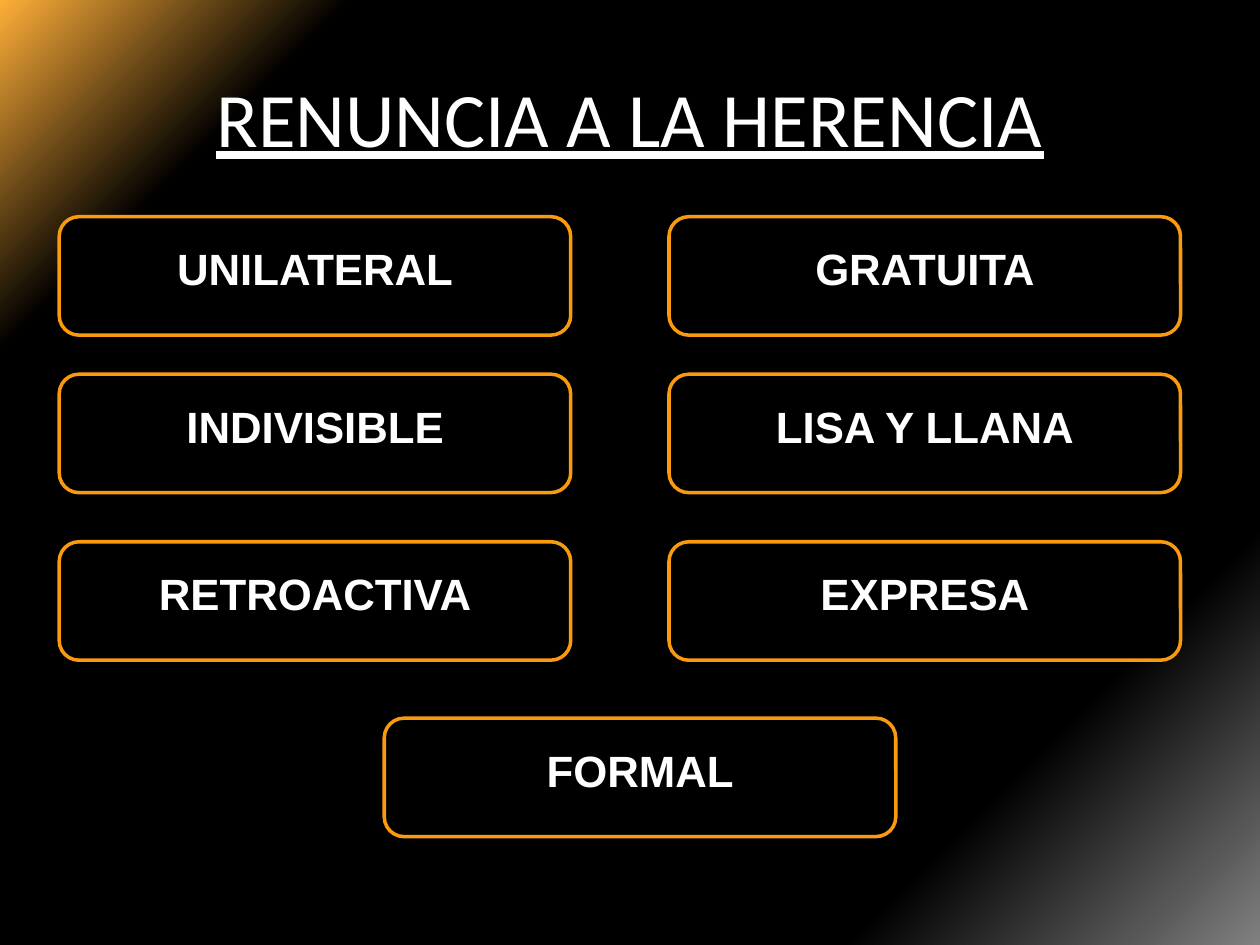
from dataclasses import dataclass

from lxml import etree
from pptx import Presentation
from pptx.dml.color import RGBColor
from pptx.enum.shapes import MSO_SHAPE
from pptx.enum.text import MSO_ANCHOR, MSO_AUTO_SIZE, PP_ALIGN
from pptx.oxml.ns import qn
from pptx.util import Inches, Pt

ROUNDED = MSO_SHAPE.ROUNDED_RECTANGLE
TOP, MIDDLE = MSO_ANCHOR.TOP, MSO_ANCHOR.MIDDLE
CENTER = PP_ALIGN.CENTER
GROW, FIXED = MSO_AUTO_SIZE.SHAPE_TO_FIT_TEXT, MSO_AUTO_SIZE.NONE


@dataclass(frozen=True)
class Theme:
    text: str = "FFFFFF"
    card: str = "000000"
    border: str = "F99A0F"
    # (position in percent, colour)
    backdrop: tuple = ((0, "FFAF39"), (16, "000000"), (81, "000000"), (100, "808080"))
    title_font: str = "Calibri"
    card_font: str = "Arial"
    title_size: int = 44
    card_size: int = 25
    border_width: int = 2


THEME = Theme()

CARD_W, CARD_H = 4.06, 0.94
LABEL_W, LABEL_H = 3.59, 0.52
LABEL_DY = 0.15
LEFT_COL, RIGHT_COL = 0.47, 5.31
PAIRS = [
    (1.72, "UNILATERAL", "GRATUITA"),
    (2.97, "INDIVISIBLE", "LISA Y LLANA"),
    (4.3, "RETROACTIVA", "EXPRESA"),
]


def set_backdrop(s):
    """Fill the background with a diagonal gradient of several stops."""
    fill = s.background.fill
    fill.gradient()
    fill.gradient_angle = 315
    stops = s.element.find(f".//{qn('a:gsLst')}")
    for old in list(stops):
        stops.remove(old)
    for percent, color in THEME.backdrop:
        stop = etree.SubElement(stops, qn("a:gs"), pos=str(percent * 1000))
        etree.SubElement(stop, qn("a:srgbClr"), val=color)


def add_text(s, text, x, y, w, h, *, font, size, bold=False, underline=False,
             anchor=TOP, auto_size=FIXED):
    tf = s.shapes.add_textbox(Inches(x), Inches(y), Inches(w), Inches(h)).text_frame
    tf.word_wrap = True
    tf.auto_size = auto_size
    tf.vertical_anchor = anchor
    p = tf.paragraphs[0]
    p.alignment = CENTER
    r = p.add_run()
    r.text = text
    r.font.name = font
    r.font.size = Pt(size)
    r.font.bold = bold
    r.font.underline = underline
    r.font.color.rgb = RGBColor.from_string(THEME.text)


def add_card(s, text, x, y):
    sp = s.shapes.add_shape(ROUNDED, Inches(x), Inches(y), Inches(CARD_W), Inches(CARD_H))
    sp.shadow.inherit = False
    sp.fill.solid()
    sp.fill.fore_color.rgb = RGBColor.from_string(THEME.card)
    sp.line.color.rgb = RGBColor.from_string(THEME.border)
    sp.line.width = Pt(THEME.border_width)
    add_text(s, text, x + (CARD_W - LABEL_W) / 2, y + LABEL_DY, LABEL_W, LABEL_H,
             font=THEME.card_font, size=THEME.card_size, bold=True, auto_size=GROW)


def main():
    prs = Presentation()
    prs.slide_width, prs.slide_height = Inches(10), Inches(7.5)
    s = prs.slides.add_slide(prs.slide_layouts[6])
    set_backdrop(s)
    add_text(s, "RENUNCIA A LA HERENCIA", 0.5, 0.3, 9, 1.25, font=THEME.title_font,
             size=THEME.title_size, underline=True, anchor=MIDDLE)
    for y, left, right in PAIRS:
        add_card(s, left, LEFT_COL, y)
        add_card(s, right, RIGHT_COL, y)
    add_card(s, "FORMAL", 3.05, 5.7)
    prs.save("out.pptx")


if __name__ == "__main__":
    main()
